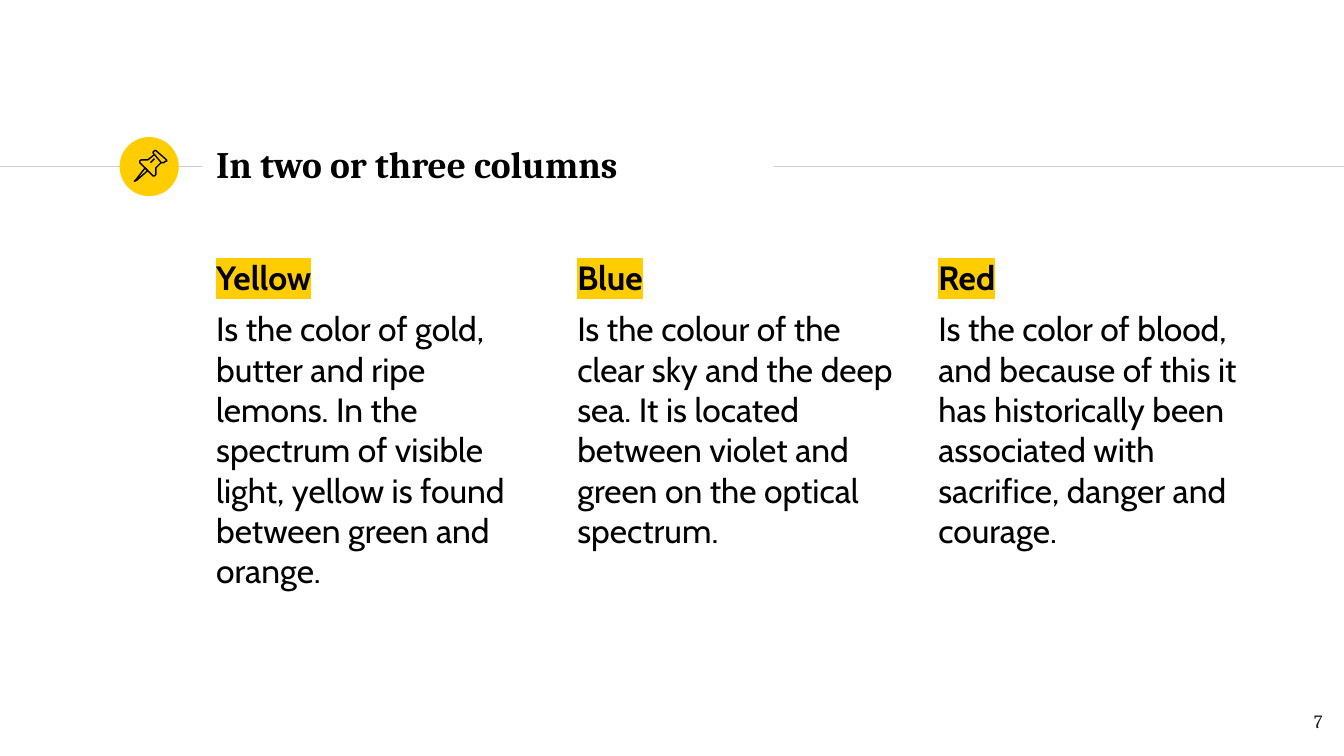
from dataclasses import dataclass

from pptx import Presentation
from pptx.dml.color import RGBColor as RGB
from pptx.enum.shapes import MSO_CONNECTOR as CONN, MSO_SHAPE as SHAPE
from pptx.enum.text import MSO_ANCHOR as ANCHOR, PP_ALIGN as ALIGN
from pptx.oxml.ns import qn
from pptx.util import Inches, Pt
from lxml import etree


@dataclass(frozen=True)
class Theme:
    accent: str = "FFCD00"
    ink: str = "000000"
    rule: str = "CCCCCC"
    number: str = "1D1D1B"
    serif: str = "Cambria"
    sans: str = "Cabin"
    title_size: int = 20
    body_size: int = 18
    number_size: int = 10
    line_width: float = 0.75


T = Theme()
WIDTH = 10
HEIGHT = WIDTH * 9 / 16

COLUMNS = [
    ("Yellow", "Is the color of gold, butter and ripe lemons. In the spectrum of "
               "visible light, yellow is found between green and orange."),
    ("Blue", "Is the colour of the clear sky and the deep sea. It is located "
             "between violet and green on the optical spectrum."),
    ("Red", "Is the color of blood, and because of this it has historically been "
            "associated with sacrifice, danger and courage."),
]

# Pushpin outlines in hundredths of an inch from the badge corner: points, closed
PUSHPIN = [
    ([(19, 23), (12, 32), (11, 33), (13, 32), (21, 25)], True),
    ([(26, 13), (31, 19), (33, 19), (34, 18), (35, 18), (35, 17), (27, 10),
      (26, 10), (25, 11), (25, 12)], True),
    ([(26, 13), (21, 17), (18, 17), (16, 17), (15, 18), (15, 19), (25, 29),
      (26, 29), (27, 28), (27, 26), (27, 23), (31, 19)], False),
    ([(23, 19), (26, 16)], False),
]


def add_text_box(s, box, **frame):
    tf = s.shapes.add_textbox(*map(Inches, box)).text_frame
    margins = {f"margin_{side}": Inches(0.1)
               for side in ("left", "top", "right", "bottom")}
    for name, value in {"word_wrap": True, **margins, **frame}.items():
        setattr(tf, name, value)
    return tf


def write(p, text, color, highlight=None, **font):
    r = p.add_run()
    r.text = text
    r.font.color.rgb = RGB.from_string(color)
    for name, value in font.items():
        setattr(r.font, name, value)
    if highlight:
        # The highlight has to follow the text fill
        mark = etree.Element(qn("a:highlight"))
        etree.SubElement(mark, qn("a:srgbClr"), val=highlight)
        r._r.rPr.find(qn("a:solidFill")).addnext(mark)


def add_rule(s, x1, x2, y):
    line = s.shapes.add_connector(CONN.STRAIGHT, *map(Inches, (x1, y, x2, y)))
    line.line.color.rgb = RGB.from_string(T.rule)
    line.line.width = Pt(T.line_width)
    etree.SubElement(line._element.spPr, qn("a:effectLst"))


def add_badge(s, x, y, size):
    disc = s.shapes.add_shape(SHAPE.OVAL, *map(Inches, (x, y, size, size)))
    disc.shadow.inherit = False
    disc.fill.solid()
    disc.fill.fore_color.rgb = RGB.from_string(T.accent)
    disc.line.fill.background()
    for points, closed in PUSHPIN:
        builder = s.shapes.build_freeform(*points[0], scale=Inches(0.01))
        builder.add_line_segments(points[1:], close=closed)
        outline = builder.convert_to_shape(Inches(x), Inches(y))
        outline.shadow.inherit = False
        outline.fill.background()
        outline.line.color.rgb = RGB.from_string(T.ink)
        outline.line.width = Pt(T.line_width)


def add_header(s, x, y, w, h):
    middle = y + 0.26
    add_rule(s, 0, x - 0.01, middle)
    add_rule(s, x + w + 0.01, WIDTH, middle)
    add_badge(s, x - 0.62, y + 0.04, 0.44)
    tf = add_text_box(s, (x, y, w, h), vertical_anchor=ANCHOR.MIDDLE)
    write(tf.paragraphs[0], "In two or three columns", T.ink,
          name=T.serif, size=Pt(T.title_size), bold=True)


def add_column(s, box, heading, body):
    tf = add_text_box(s, box)
    font = {"name": T.sans, "size": Pt(T.body_size)}
    head, text = tf.paragraphs[0], tf.add_paragraph()
    for p in (head, text):
        p.space_before = Pt(6)
    write(head, heading, T.ink, highlight=T.accent, bold=True, **font)
    write(text, body, T.ink, bold=False, **font)


def add_columns(s, x, y, w, h, gap):
    width = (w - gap * (len(COLUMNS) - 1)) / len(COLUMNS)
    for i, (heading, body) in enumerate(COLUMNS):
        add_column(s, (x + i * (width + gap), y, width, h), heading, body)


def add_page_number(s, box):
    p = add_text_box(s, box).paragraphs[0]
    p.alignment = ALIGN.RIGHT
    write(p, "7", T.number, name=T.serif, size=Pt(T.number_size))


def main():
    prs = Presentation()
    prs.slide_width, prs.slide_height = Inches(WIDTH), Inches(HEIGHT)
    s = prs.slides.add_slide(prs.slide_layouts[6])
    add_header(s, 1.51, 0.98, 4.24, 0.48)
    add_columns(s, 1.51, 1.81, 7.92, 3.41, gap=0.14)
    add_page_number(s, (9.34, 5.2, 0.6, 0.43))
    prs.save("out.pptx")


if __name__ == "__main__":
    main()
